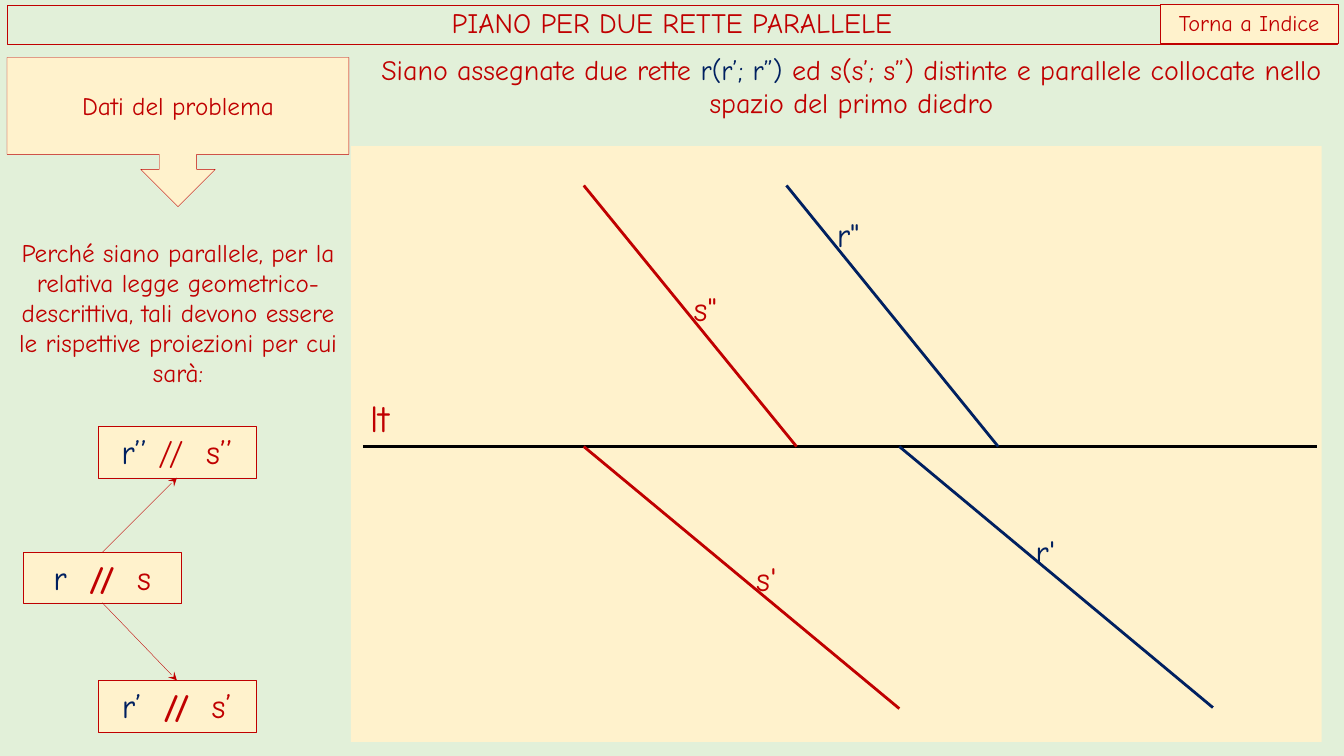
from lxml import etree
from pptx import Presentation
from pptx.dml.color import RGBColor
from pptx.enum import shapes, text
from pptx.oxml import ns
from pptx.util import Pt

PX = 9144  # 100 px to the inch
RED = RGBColor(0xC0, 0x00, 0x00)
NAVY = RGBColor(0x00, 0x20, 0x60)
BLACK = RGBColor(0x00, 0x00, 0x00)
CREAM = RGBColor(0xFF, 0xF2, 0xCC)
GREEN = RGBColor(0xE2, 0xF0, 0xD9)
RECT = shapes.MSO_SHAPE.RECTANGLE
MIDDLE, TOP = text.MSO_ANCHOR.MIDDLE, text.MSO_ANCHOR.TOP
CENTER, LEFT = text.PP_ALIGN.CENTER, text.PP_ALIGN.LEFT
THIN, HAIRLINE = 0.25, 0

prs = Presentation()
prs.slide_width, prs.slide_height = 1333 * PX, 750 * PX
slide = prs.slides.add_slide(prs.slide_layouts[5])
slide.background.fill.solid()
slide.background.fill.fore_color.rgb = GREEN


def write(box, runs, size, anchor=TOP, align=CENTER, **frame_format):
    """Fill a shape with one paragraph of (words, colour, bold) runs."""
    frame = box.text_frame
    settings = {"word_wrap": True, "auto_size": text.MSO_AUTO_SIZE.NONE,
                "vertical_anchor": anchor, **frame_format}
    for name, value in settings.items():
        setattr(frame, name, value)
    paragraph = frame.paragraphs[0]
    paragraph.alignment = align
    for words, colour, bold in runs:
        run = paragraph.add_run()
        run.text = words
        run.font.color.rgb = colour
        for name, value in {"name": "Comic Neue", "size": Pt(size), "bold": bold}.items():
            setattr(run.font, name, value)


def draw_line(start, end, colour, width):
    line = slide.shapes.add_connector(
        shapes.MSO_CONNECTOR.STRAIGHT, *(v * PX for v in start + end))
    line.line.color.rgb = colour
    line.line.width = Pt(width)
    etree.SubElement(line._element.spPr, ns.qn("a:effectLst"))
    return line


# Heading and introduction
heading = slide.shapes.title
for side, value in {"left": 7, "top": 5, "width": 1319, "height": 39}.items():
    setattr(heading, side, value * PX)
heading.line.color.rgb = RED
heading.line.width = Pt(THIN)
write(heading, [("PIANO PER DUE RETTE PARALLELE", RED, False)], 20, MIDDLE)
heading.text_frame.paragraphs[0].line_spacing = 0.9

passages = [
    ((362, 47, 965, 77), 20, [
        ("Siano assegnate due rette ", RED, False),
        ("r(r’; r”) ", NAVY, False),
        ("ed s(s’; s”) distinte e parallele collocate nello spazio del primo diedro",
         RED, False)]),
    ((7, 230, 339, 192), 18, [
        ("Perché siano parallele, per la relativa legge geometrico-descrittiva, "
         "tali devono essere le rispettive proiezioni per cui sarà:", RED, False)]),
]
for place, size, runs in passages:
    write(slide.shapes.add_textbox(*(v * PX for v in place)), runs, size)

# Framed boxes of the heading row and the left column
framed = {
    "index": (RECT, (1151, 4, 176, 39), 16, TOP, [("Torna a Indice", RED, False)]),
    "data": (shapes.MSO_SHAPE.DOWN_ARROW_CALLOUT, (7, 57, 339, 148), 18, MIDDLE,
             [("Dati del problema", RED, False)]),
    "lines": (RECT, (23, 548, 157, 50), 24, TOP,
              [("r  ", NAVY, False), ("//", RED, True), ("  s", RED, False)]),
    "first": (RECT, (97, 675, 157, 51), 24, TOP,
              [("r’  ", NAVY, False), ("//", RED, True), ("  s’", RED, False)]),
    "second": (RECT, (97, 423, 157, 51), 24, TOP,
               [("r’’ ", NAVY, False), ("//  s’’", RED, False)]),
}
boxes = {}
for key, (kind, place, size, anchor, runs) in framed.items():
    box = boxes[key] = slide.shapes.add_shape(kind, *(v * PX for v in place))
    box.shadow.inherit = False
    box.fill.solid()
    box.fill.fore_color.rgb = CREAM
    box.line.color.rgb = RED
    box.line.width = Pt(THIN)
    write(box, runs, size, anchor)

# Arrows from the lines to their two projections
for projection, leave, arrive in (("second", 0, 2), ("first", 2, 0)):
    arrow = draw_line((0, 0), (0, 0), RED, THIN)
    arrow.begin_connect(boxes["lines"], leave)
    arrow.end_connect(boxes[projection], arrive)
    outline = arrow._element.spPr.find(ns.qn("a:ln"))
    etree.SubElement(outline, ns.qn("a:tailEnd"), type="stealth")

# Drawing panel with its labels
panel = slide.shapes.add_shape(RECT, *(v * PX for v in (348, 145, 963, 591)))
panel.shadow.inherit = False
panel.fill.solid()
panel.fill.fore_color.rgb = CREAM
panel.line.fill.background()

labels = [
    ("lt", (367, 392, 29, 46), 27, RED),
    ("r'", (1027, 527, 30, 41), 24, NAVY),
    ('r"', (830, 212, 31, 41), 24, NAVY),
    ('s"', (688, 286, 31, 41), 24, RED),
    ("s'", (750, 553, 30, 41), 24, RED),
]
no_insets = {f"margin_{side}": 0 for side in ("left", "top", "right", "bottom")}
for words, place, size, colour in labels:
    label = slide.shapes.add_textbox(*(v * PX for v in place))
    label.fill.solid()
    label.fill.fore_color.rgb = CREAM
    write(label, [(words, colour, False)], size, align=LEFT,
          **{**no_insets, "word_wrap": False})

# Ground line and the projections of s and r
GROUND = 443
for start, end, colour in [
    ((360, GROUND), (1306, GROUND), BLACK),
    ((790, GROUND), (579, 184), RED),
    ((892, 703), (579, GROUND), RED),
    ((990, GROUND), (780, 184), NAVY),
    ((1203, 702), (892, GROUND), NAVY),
]:
    draw_line(start, end, colour, HAIRLINE)

prs.save("out.pptx")
